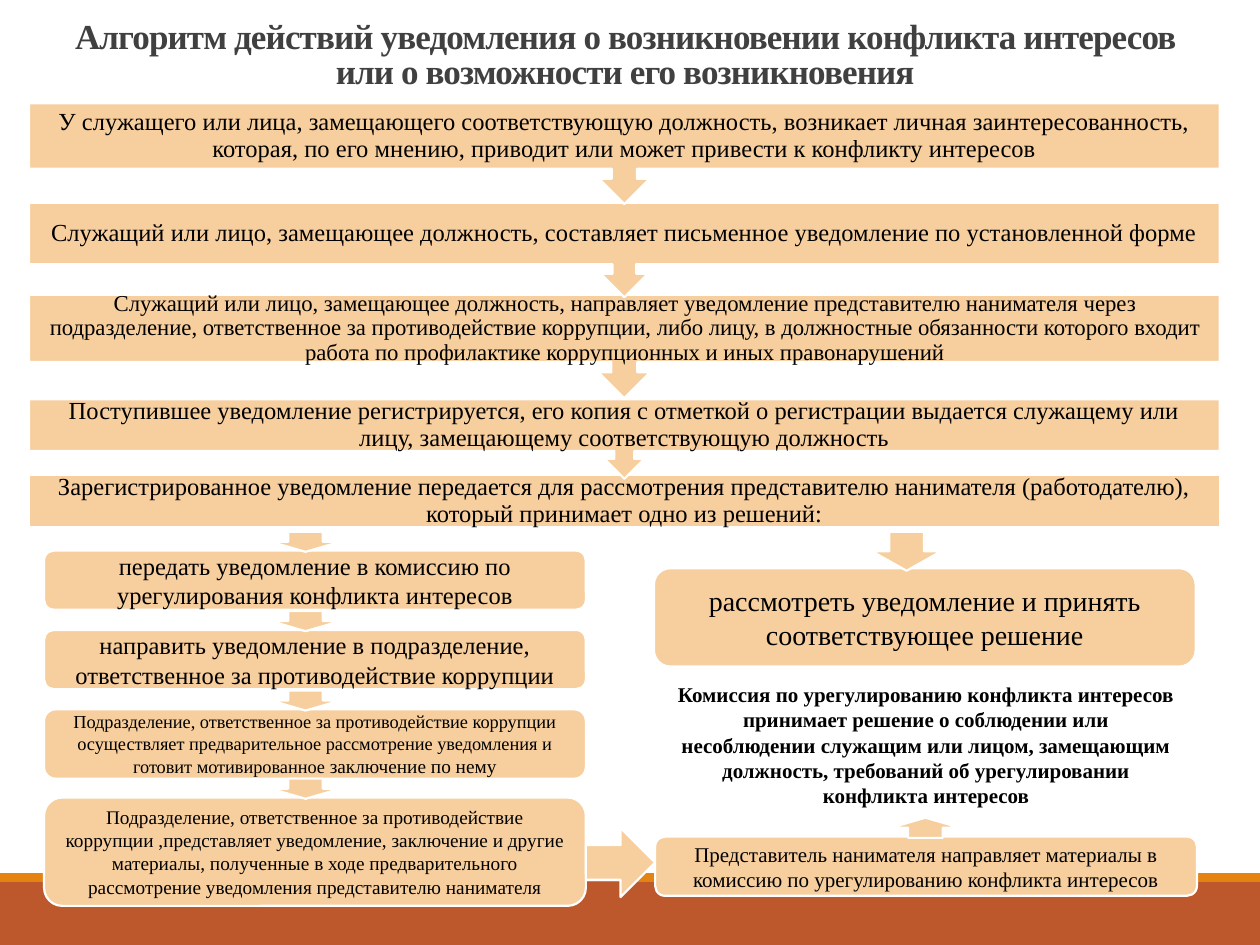
"""Build a one-page flowchart of the conflict-of-interest notification procedure."""
from typing import NamedTuple, Optional

from pptx import Presentation
from pptx.dml.color import RGBColor
from pptx.enum.shapes import MSO_SHAPE
from pptx.enum.text import MSO_ANCHOR, MSO_AUTO_SIZE, PP_ALIGN
from pptx.util import Inches, Pt

COLORS = {"peach": "F7CE9D", "white": "FFFFFF", "black": "000000",
          "title": "404040", "rust": "BD582C", "orange": "E48312"}
FONT = "Times New Roman"
COLUMNS = 100
SLIDE_WIDTH, SLIDE_HEIGHT = Inches(10), Inches(7.5)
CELL = SLIDE_WIDTH / COLUMNS
BAND_LEFT, BAND_WIDTH = 2.3, 94.5
BOX_WIDTH, LEFT_COLUMN, RIGHT_COLUMN = 43, 3.5, 52
ARROW_WIDTH, ARROW_HEIGHT = 5.5, 1.6


class Area(NamedTuple):
    """Place on the grid, in columns and rows."""
    left: float
    top: float
    width: float
    height: float


class Span(NamedTuple):
    """Piece of text with one format."""
    text: str
    size: float
    bold: bool = False
    color: str = "black"
    spacing: Optional[int] = None


class Band(NamedTuple):
    """Full-width step of the procedure."""
    top: float
    height: float
    span: Span
    kind: MSO_SHAPE = MSO_SHAPE.DOWN_ARROW_CALLOUT
    inset: float = 1.1


class Box(NamedTuple):
    """Rounded step in one of the two branches."""
    area: Area
    spans: list[Span]
    fill: str = "peach"


class Arrow(NamedTuple):
    """Block arrow between steps."""
    area: Area
    kind: MSO_SHAPE = MSO_SHAPE.DOWN_ARROW


BANDS = [
    Band(8.2, 8, Span("У служащего или лица, замещающего соответствующую должность, возникает личная "
                      "заинтересованность, которая, по его мнению, приводит или может привести "
                      "к конфликту интересов", 14)),
    Band(16.1, 7.5, Span("Служащий или лицо, замещающее должность, составляет письменное уведомление "
                         "по установленной форме", 14)),
    Band(23.4, 8.2, Span("Служащий или лицо, замещающее должность, направляет уведомление представителю "
                         "нанимателя через подразделение, ответственное за противодействие коррупции, "
                         "либо лицу, в должностные обязанности которого входит работа по профилактике "
                         "коррупционных и иных правонарушений", 13), inset=1),
    Band(31.7, 6.3, Span("Поступившее уведомление регистрируется, его копия с отметкой о регистрации "
                         "выдается служащему или лицу, замещающему соответствующую должность", 14)),
    Band(37.7, 4.1, Span("Зарегистрированное уведомление передается для рассмотрения представителю "
                         "нанимателя (работодателю), который принимает одно из решений:", 14),
         MSO_SHAPE.RECTANGLE),
]

LEFT_BOXES = [
    Box(Area(LEFT_COLUMN, 43.7, BOX_WIDTH, 4.7),
        [Span("передать уведомление в комиссию по урегулирования конфликта интересов", 14)]),
    Box(Area(LEFT_COLUMN, 50, BOX_WIDTH, 4.7),
        [Span("направить уведомление в подразделение, ответственное за противодействие коррупции", 14)]),
    Box(Area(LEFT_COLUMN, 56.3, BOX_WIDTH, 5.5),
        [Span("Подразделение, ответственное за противодействие коррупции осуществляет предварительное "
              "рассмотрение уведомления и готовит мотивированное ", 10.5),
         Span("заключение по нему", 11)]),
    Box(Area(LEFT_COLUMN, 63.3, BOX_WIDTH, 8.6),
        [Span("Подразделение, ответственное за противодействие коррупции ,представляет уведомление, "
              "заключение и другие материалы, полученные в ходе предварительного рассмотрение "
              "уведомления представителю нанимателя", 11)]),
]

RIGHT_BOXES = [
    Box(Area(RIGHT_COLUMN - 0.1, 45.1, BOX_WIDTH, 7.8),
        [Span("рассмотреть уведомление и принять соответствующее решение", 16)]),
    Box(Area(RIGHT_COLUMN, 66.4, BOX_WIDTH, 4.7),
        [Span("Представитель нанимателя направляет материалы в комиссию по урегулированию "
              "конфликта интересов", 12)]),
    Box(Area(RIGHT_COLUMN, 54, BOX_WIDTH, 10.2),
        [Span("Комиссия по урегулированию конфликта интересов принимает решение о соблюдении или "
              "несоблюдении служащим или лицом, замещающим должность, требований об урегулировании "
              "конфликта интересов", 12, bold=True)], "white"),
]

ARROWS = [Arrow(Area(21.5, box.area.top - 1.5, ARROW_WIDTH, ARROW_HEIGHT)) for box in LEFT_BOXES] + [
    Arrow(Area(69.2, 42.2, ARROW_WIDTH, 3.1)),
    Arrow(Area(LEFT_COLUMN + BOX_WIDTH, 65.7, ARROW_WIDTH, ARROW_WIDTH), MSO_SHAPE.RIGHT_ARROW),
    Arrow(Area(70.7, 64.9, ARROW_WIDTH, ARROW_HEIGHT), MSO_SHAPE.UP_ARROW),
]


def to_lengths(area: Area) -> list[int]:
    """Convert grid cells to slide lengths."""
    return [round(value * CELL) for value in area]


def add_figure(page, kind: MSO_SHAPE, area: Area, fill: str = "peach", outlined: bool = True):
    """Add a flat shape with a white outline or none."""
    figure = page.shapes.add_shape(kind, *to_lengths(area))
    figure.shadow.inherit = False
    figure.fill.solid()
    figure.fill.fore_color.rgb = RGBColor.from_string(COLORS[fill])
    if outlined:
        figure.line.color.rgb = RGBColor.from_string(COLORS["white"])
        figure.line.width = Pt(1.25)
    else:
        figure.line.fill.background()
    return figure


def write(frame, spans: list[Span], anchor: MSO_ANCHOR = MSO_ANCHOR.MIDDLE,
          line_spacing: Optional[float] = None) -> None:
    """Write one centred paragraph run by run."""
    frame.word_wrap = True
    frame.auto_size = MSO_AUTO_SIZE.NONE
    frame.vertical_anchor = anchor
    para = frame.paragraphs[0]
    para.alignment = PP_ALIGN.CENTER
    para.line_spacing = line_spacing
    for span in spans:
        run = para.add_run()
        run.text = span.text
        run.font.name = FONT
        run.font.size = Pt(span.size)
        run.font.bold = span.bold
        run.font.color.rgb = RGBColor.from_string(COLORS[span.color])
        if span.spacing is not None:
            run._r.get_or_add_rPr().set("spc", str(span.spacing))


def add_title(page) -> None:
    """Move and format the title placeholder."""
    title = page.shapes.title
    title.left, title.top, title.width, title.height = to_lengths(Area(3.1, 0.5, 93, 7.3))
    write(title.text_frame,
          [Span("Алгоритм действий уведомления о возникновении конфликта интересов или о возможности "
                "его возникновения", 20, True, "title", -50)], MSO_ANCHOR.BOTTOM, 0.85)


def add_band(page, band: Band) -> None:
    """Add a full-width step with its text."""
    figure = add_figure(page, band.kind, Area(BAND_LEFT, band.top, BAND_WIDTH, band.height))
    frame = figure.text_frame
    inset = round(band.inset * CELL)
    frame.margin_left = frame.margin_right = frame.margin_top = frame.margin_bottom = inset
    write(frame, [band.span], line_spacing=0.9)


def main() -> None:
    """Build and save the deck."""
    deck = Presentation()
    deck.slide_width, deck.slide_height = SLIDE_WIDTH, SLIDE_HEIGHT
    page = deck.slides.add_slide(deck.slide_layouts[5])
    add_figure(page, MSO_SHAPE.RECTANGLE, Area(0, 70, COLUMNS, 5), "rust", outlined=False)
    add_figure(page, MSO_SHAPE.RECTANGLE, Area(0, 69.3, COLUMNS, 0.7), "orange", outlined=False)
    add_title(page)
    for band in reversed(BANDS):
        add_band(page, band)
    for box in LEFT_BOXES + RIGHT_BOXES:
        figure = add_figure(page, MSO_SHAPE.ROUNDED_RECTANGLE, box.area, box.fill)
        write(figure.text_frame, box.spans)
    for arrow in ARROWS:
        add_figure(page, arrow.kind, arrow.area)
    deck.save("out.pptx")


if __name__ == "__main__":
    main()
